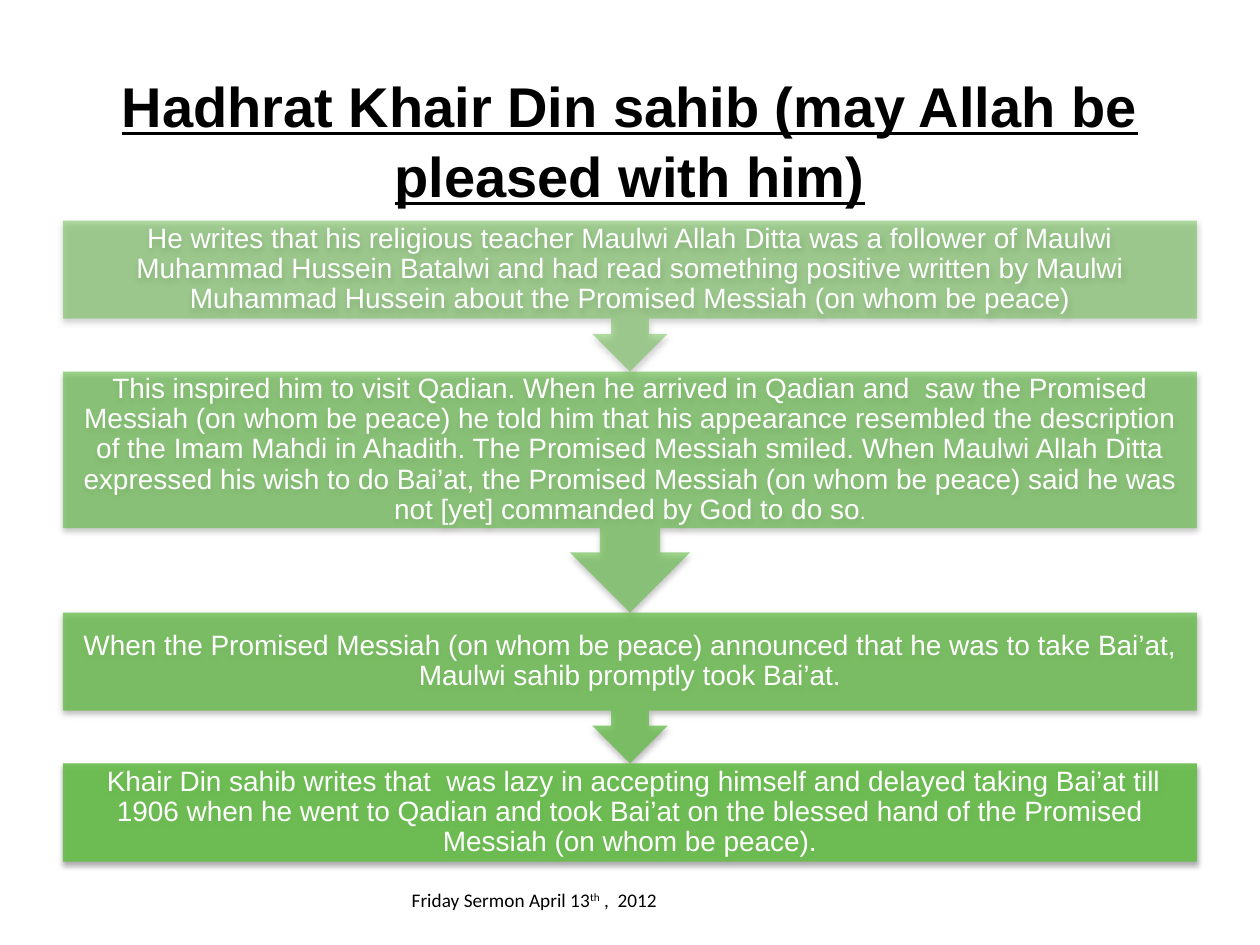
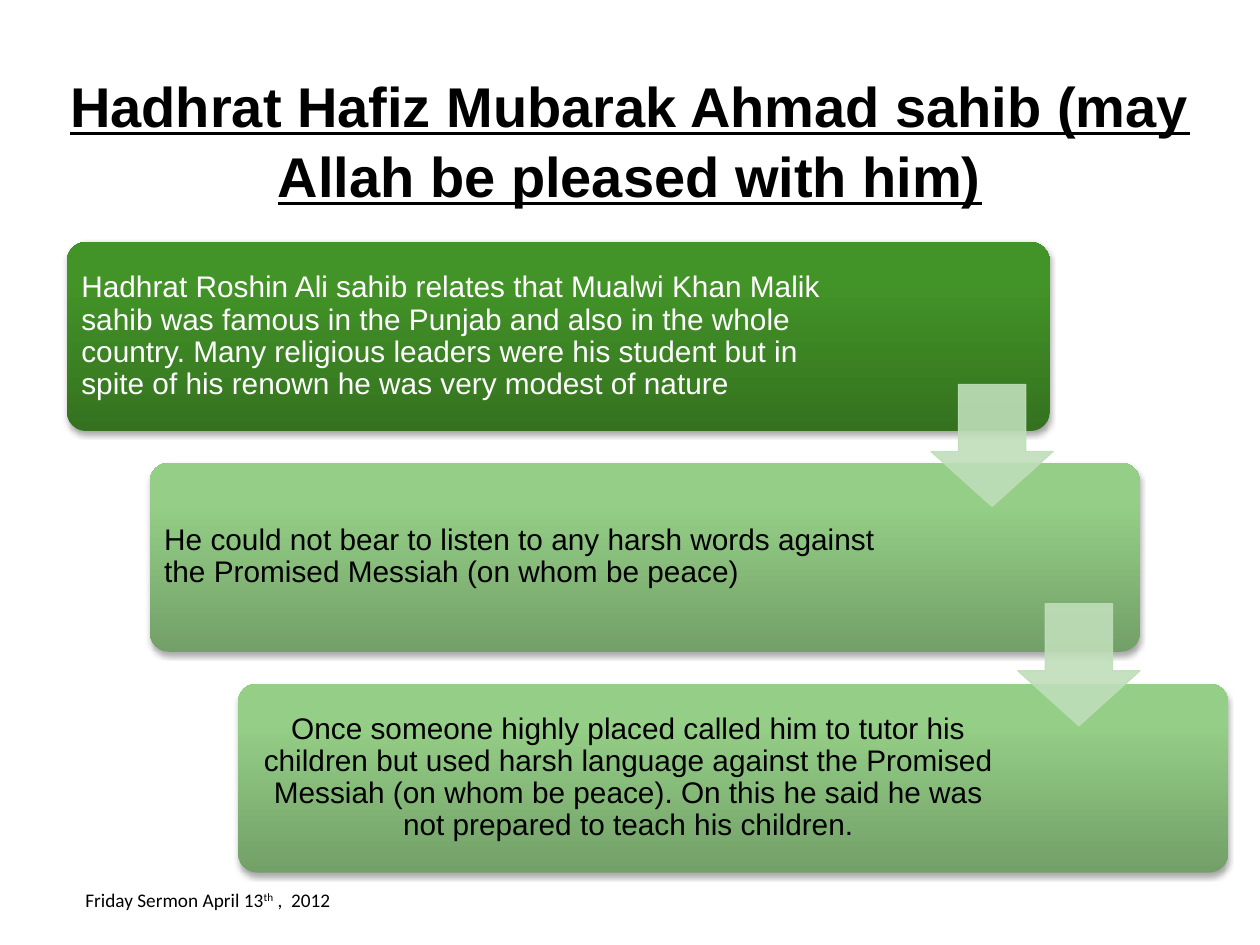
"""Build two sermon slides: a chain of callouts and a stair of cards."""
from copy import deepcopy

from lxml import etree
from pptx import Presentation
from pptx.dml.color import RGBColor
from pptx.enum.shapes import MSO_SHAPE
from pptx.enum.text import MSO_ANCHOR, MSO_AUTO_SIZE, PP_ALIGN
from pptx.oxml.ns import qn
from pptx.util import Cm, Pt

RECT, ROUND = MSO_SHAPE.RECTANGLE, MSO_SHAPE.ROUNDED_RECTANGLE
CALL, DOWN = MSO_SHAPE.DOWN_ARROW_CALLOUT, MSO_SHAPE.DOWN_ARROW
LEFT, MID = PP_ALIGN.LEFT, PP_ALIGN.CENTER
BLACK, WHITE, GREEN, PALE = "000000", "FFFFFF", "66BD49", "BFDEB9"
DARK = ("34721F", "439428", "429726")
LIGHT = ("73A068", "95CF87", "95D286")


def tint(color, code, alpha=100):
    color.rgb = RGBColor.from_string(code)
    if alpha < 100:
        etree.SubElement(color._xFill[0], qn("a:alpha"), val=str(alpha * 1000))


def write(shape, text, size=16, code=WHITE, font="Arial", bold=False, line=False,
          align=LEFT, space=0.9, pad=(0.3, 0.3, 0.3, 0.3), anchor=MSO_ANCHOR.MIDDLE, base=0):
    frame = shape.text_frame
    frame.word_wrap, frame.auto_size = True, MSO_AUTO_SIZE.NONE
    frame.vertical_anchor = anchor
    frame.margin_left, frame.margin_top, frame.margin_right, frame.margin_bottom = map(Cm, pad)
    para = frame.paragraphs[0]
    para.alignment, para.line_spacing = align, space
    run = para.add_run()
    run.text = text
    run.font.size, run.font.name = Pt(size), font
    run.font.bold, run.font.underline = bold, line
    tint(run.font.color, code)
    if base:
        run.font._element.set("baseline", str(base * 1000))


deck = Presentation()
deck.slide_width, deck.slide_height = Cm(25.4), Cm(19.05)
pages = []
for name, left in (
    ("Hadhrat Khair Din sahib (may Allah be pleased with him)", 8.05),
    ("Hadhrat Hafiz Mubarak Ahmad sahib (may Allah be pleased with him)", 1.47),
):
    page = deck.slides.add_slide(deck.slide_layouts[5])
    pages.append(page)
    title = page.shapes.title
    title.left, title.top, title.width, title.height = Cm(1.27), Cm(1.27), Cm(22.86), Cm(2.54)
    write(title, name, size=32, code=BLACK, bold=True, line=True, align=MID,
          space=1.04, pad=(0, 0.11, 0, 0), anchor=MSO_ANCHOR.TOP)
    foot = page.shapes.add_textbox(Cm(left), Cm(17.78), Cm(8.69), Cm(0.74))
    for part, base in (("Friday Sermon April 13", 0), ("th", 30), (" ,  2012", 0)):
        write(foot, part, size=11, code=BLACK, font="Calibri", space=1, base=base,
              pad=(0.25, 0.13, 0.25, 0.13), anchor=MSO_ANCHOR.TOP)

chain, stair = pages
boxes = []
steps = (
    (CALL, 3.04, 50, "He writes that his religious teacher Maulwi Allah Ditta was a follower of "
     "Maulwi Muhammad Hussein Batalwi and had read something positive written by Maulwi "
     "Muhammad Hussein about the Promised Messiah (on whom be peace)"),
    (CALL, 4.86, 63, "This inspired him to visit Qadian. When he arrived in Qadian and  saw the "
     "Promised Messiah (on whom be peace) he told him that his appearance resembled the "
     "description of the Imam Mahdi in Ahadith. The Promised Messiah smiled. When Maulwi Allah "
     "Ditta expressed his wish to do Bai’at, the Promised Messiah (on whom be peace) said he was "
     "not [yet] commanded by God to do so"),
    (CALL, 3.04, 77, "When the Promised Messiah (on whom be peace) announced that he was to take "
     "Bai’at, Maulwi sahib promptly took Bai’at."),
    (RECT, 1.98, 90, " Khair Din sahib writes that  was lazy in accepting himself and delayed "
     "taking Bai’at till 1906 when he went to Qadian and took Bai’at on the blessed hand of the "
     "Promised Messiah (on whom be peace)."),
)
top = 4.45
for kind, tall, alpha, text in steps:
    box = chain.shapes.add_shape(kind, Cm(1.27), Cm(top), Cm(22.86), Cm(tall))
    box.fill.solid()
    tint(box.fill.fore_color, GREEN, alpha)
    write(box, text, align=MID)
    boxes.append(box)
    top += tall
write(boxes[1], ".", size=12, align=MID)

cards = (
    (1.35, 19.81, 4.03, DARK, WHITE, LEFT, "Hadhrat Roshin Ali sahib relates that Mualwi Khan "
     "Malik sahib was famous in the Punjab and also in the whole country. Many religious leaders "
     "were his student but in spite of his renown he was very modest of nature"),
    (3.02, 19.96, 4.4, LIGHT, BLACK, LEFT, "He could not bear to listen to any harsh words "
     "against the Promised Messiah (on whom be peace)"),
    (4.8, 19.96, 4.4, LIGHT, BLACK, MID, "Once someone highly placed called him to tutor his "
     "children but used harsh language against the Promised Messiah (on whom be peace). On this "
     "he said he was not prepared to teach his children."),
)
for row, (left, wide, gap, shades, ink, align, text) in enumerate(cards):
    card = stair.shapes.add_shape(ROUND, Cm(left), Cm(4.88 + 4.45 * row), Cm(wide), Cm(3.81))
    card.adjustments[0] = 0.1
    card.fill.gradient()
    card.fill.gradient_angle = 90
    stops = card._element.spPr.find(".//" + qn("a:gsLst"))
    stops.append(deepcopy(stops[-1]))
    for stop, place, shade in zip(card.fill.gradient_stops, (0, 0.8, 1), shades):
        stop.position = place
        tint(stop.color, shade)
    write(card, text, size=17, code=ink, align=align, pad=(0.18, 0.18, gap, 0.18))
    boxes.append(card)

for box in boxes:
    box.line.fill.background()
    box.shadow.inherit = False
    glow = etree.SubElement(
        box._element.spPr.find(qn("a:effectLst")), qn("a:outerShdw"), blurRad=str(Pt(3.1)),
        dist=str(Pt(1.8)), dir="5400000", rotWithShape="0")
    shade = etree.SubElement(glow, qn("a:srgbClr"), val=BLACK)
    etree.SubElement(shade, qn("a:alpha"), val="35000")

for row in range(2):
    arrow = stair.shapes.add_shape(
        DOWN, Cm(18.77 + 1.75 * row), Cm(7.75 + 4.42 * row), Cm(2.46), Cm(2.46))
    arrow.adjustments[0], arrow.adjustments[1] = 0.55, 0.45
    arrow.shadow.inherit = False
    arrow.fill.solid()
    tint(arrow.fill.fore_color, PALE, 90)
    arrow.line.width = Pt(0.75)
    tint(arrow.line.color, PALE, 90)

deck.save("out.pptx")
